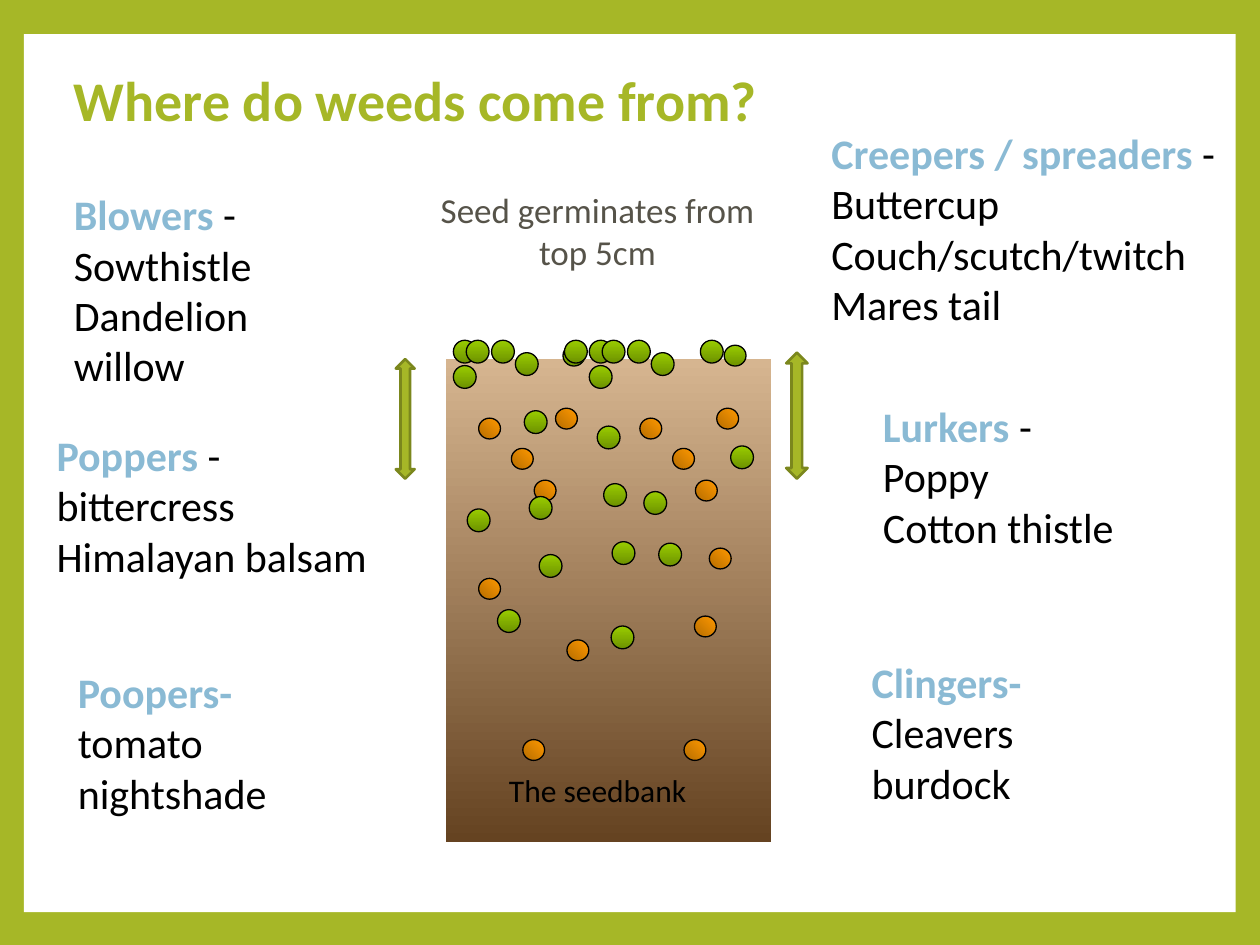
from pptx import Presentation
from pptx.dml.color import RGBColor
from pptx.enum.shapes import MSO_SHAPE
from pptx.enum.text import MSO_AUTO_SIZE, PP_ALIGN
from pptx.util import Cm, Pt

RECTANGLE = MSO_SHAPE.RECTANGLE
OVAL = MSO_SHAPE.OVAL
ARROW = MSO_SHAPE.UP_DOWN_ARROW
GROW = MSO_AUTO_SIZE.SHAPE_TO_FIT_TEXT
CENTER = PP_ALIGN.CENTER

COLORS = {
    "lime": "A6B727", "lime_edge": "7B871D", "white": "FFFFFF", "black": "000000",
    "blue": "8ABAD4", "grey": "565349", "soil_top": "D6B590", "soil_deep": "654321",
    "orange_dark": "B66D00", "orange": "FF9900", "green": "99CC00", "green_dark": "6D9200",
}
RGB = {name: RGBColor.from_string(value) for name, value in COLORS.items()}

# Gradient start, gradient end, angle, outline
SOIL = ("soil_top", "soil_deep", 270, None)
ORANGE_SEED = ("orange_dark", "orange", 45, "black")
GREEN_SEED = ("green", "green_dark", 270, "black")

deck = Presentation()
deck.slide_width, deck.slide_height = Cm(25.4), Cm(19.05)
page = deck.slides.add_slide(deck.slide_layouts[6])


def add_shape(kind, left, top, width, height, style, line_width=0.75):
    start, end, angle, outline = style
    shape = page.shapes.add_shape(kind, Cm(left), Cm(top), Cm(width), Cm(height))
    shape.shadow.inherit = False
    if start == end:
        shape.fill.solid()
        shape.fill.fore_color.rgb = RGB[start]
    else:
        shape.fill.gradient()
        shape.fill.gradient_angle = angle
        for stop, name in zip(shape.fill.gradient_stops, (start, end)):
            stop.color.rgb = RGB[name]
    if outline:
        shape.line.color.rgb = RGB[outline]
        shape.line.width = Pt(line_width)
    else:
        shape.line.fill.background()


def add_text(left, top, width, height, lines, size, wrap=False, align=None):
    """Each line is a list of (text, colour, bold) spans."""
    box = page.shapes.add_textbox(Cm(left), Cm(top), Cm(width), Cm(height))
    frame = box.text_frame
    frame.word_wrap = wrap
    frame.auto_size = GROW
    for index, line in enumerate(lines):
        para = frame.add_paragraph() if index else frame.paragraphs[0]
        para.alignment = align
        for text, color, bold in line:
            span = para.add_run()
            span.text = text
            span.font.name = "Calibri"
            span.font.size = Pt(size)
            span.font.bold = bold
            span.font.color.rgb = RGB[color]


# Lime frame around a white panel
page.background.fill.solid()
page.background.fill.fore_color.rgb = RGB["lime"]
add_shape(RECTANGLE, 0.48, 0.69, 24.43, 17.7, ("white", "white", 0, None))

# Two soil halves with the same basic seeds, plus a few of their own
HALF_STEP = 3.25
shared_seeds = [(9.65, 8.43), (10.77, 9.68), (11.2, 8.23), (10.31, 9.04), (10.54, 14.91)]
own_seeds = [
    [(11.43, 12.9), (9.65, 11.66)],
    [(14.3, 11.05), (14, 12.42)],
]
for half, extra_seeds in enumerate(own_seeds):
    shift = half * HALF_STEP
    add_shape(RECTANGLE, 8.99 + shift, 7.24, 3.3, 9.73, SOIL)
    for left, top in [(x + shift, y) for x, y in shared_seeds] + extra_seeds:
        add_shape(OVAL, left, top, 0.44, 0.42, ORANGE_SEED)
    add_shape(OVAL, 11.35 + shift, 6.96, 0.44, 0.42, GREEN_SEED)

# Green seeds: two equal clusters on the surface, the rest in the soil
CLUSTER_STEP = 2.74
cluster = [(9.14, 6.86), (9.14, 7.37), (11.38, 6.86), (10.39, 7.11), (9.4, 6.86), (9.91, 6.86)]
buried = [
    (12.98, 9.91), (9.42, 10.26), (10.57, 8.28), (10.67, 10.01), (10.03, 12.29), (12.32, 12.62),
    (12.17, 9.75), (10.87, 11.18), (14.73, 8.99), (13.28, 10.95), (12.04, 8.59), (12.34, 10.92),
]
surface = [(x + step, y) for step in (0, CLUSTER_STEP) for x, y in cluster]
for left, top in surface + buried:
    add_shape(OVAL, left, top, 0.46, 0.46, GREEN_SEED)

# Germination depth
add_text(8.59, 3.68, 6.91, 1.96, [[("Seed germinates from top 5cm", "grey", False)]], 20,
         wrap=True, align=CENTER)
for left, top, width, height in [(7.98, 7.24, 0.38, 2.41), (15.85, 7.11, 0.43, 2.54)]:
    add_shape(ARROW, left, top, width, height, ("lime", "lime", 0, "lime_edge"), 1.5)

# Weed groups: place, heading, dash after the heading, examples
groups = [
    (1.24, 3.68, 4.27, 4.37, "Blowers", " -", ["Sowthistle", "Dandelion", "willow"]),
    (0.89, 8.53, 7.04, 3.33, "Poppers", " -", ["bittercress", "Himalayan balsam"]),
    (16.51, 2.44, 8.41, 4.37, "Creepers / spreaders ", "-",
     ["Buttercup", "Couch/scutch/twitch", "Mares tail"]),
    (17.55, 7.95, 5.36, 3.33, "Lurkers ", "-", ["Poppy", "Cotton thistle"]),
    (17.32, 13.11, 3.94, 3.33, "Clingers-", "", ["Cleavers", "burdock"]),
    (1.32, 13.31, 4.47, 3.33, "Poopers-", "", ["tomato", "nightshade"]),
]
for left, top, width, height, heading, dash, weeds in groups:
    first_line = [(heading, "blue", True)]
    if dash:
        first_line.append((dash, "black", False))
    lines = [first_line] + [[(weed, "black", False)] for weed in weeds]
    add_text(left, top, width, height, lines, 24)

# Seedbank label and title
add_text(10.01, 15.42, 4.22, 1.02, [[("The seedbank", "black", False)]], 18)
add_text(1.24, 1.19, 14.68, 1.63, [[("Where do weeds come from?", "lime", True)]], 32)

deck.save("out.pptx")
